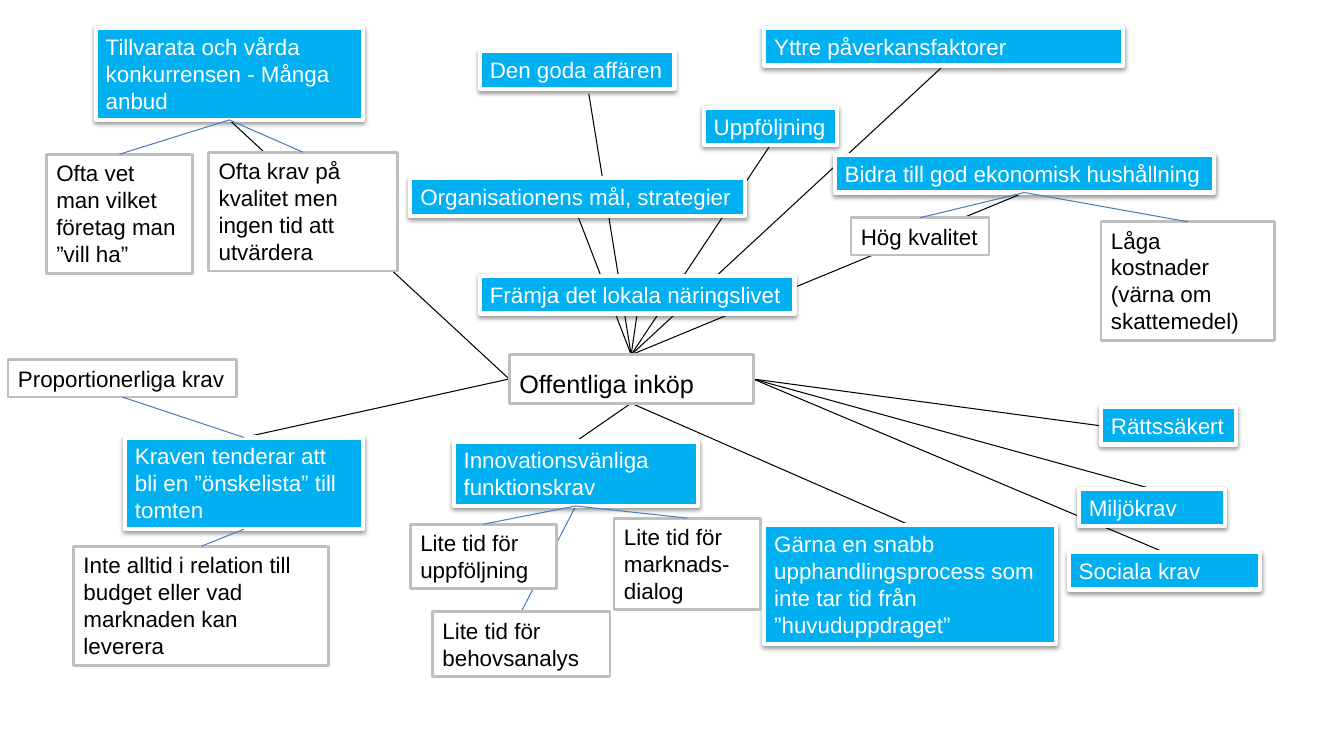
"""Build a mind map of the demands on public procurement."""
from lxml import etree
from pptx import Presentation
from pptx.dml.color import RGBColor
from pptx.enum.shapes import MSO_CONNECTOR
from pptx.enum.text import MSO_ANCHOR, MSO_AUTO_SIZE, PP_ALIGN
from pptx.oxml import parse_xml
from pptx.oxml.ns import nsdecls, qn
from pptx.util import Inches, Pt

BLACK = RGBColor(0x00, 0x00, 0x00)
WHITE = RGBColor(0xFF, 0xFF, 0xFF)
GREY = RGBColor(0xBF, 0xBF, 0xBF)
CYAN = RGBColor(0x00, 0xB0, 0xF0)
BLUE = RGBColor(0x4B, 0x7E, 0xBC)
TOP, LEFT, BOTTOM, RIGHT = range(4)

SHADOW = (
    f'<a:effectLst {nsdecls("a")}><a:outerShdw blurRad="40000" dist="20000" '
    'dir="5400000" rotWithShape="0"><a:srgbClr val="000000">'
    '<a:alpha val="38000"/></a:srgbClr></a:outerShdw></a:effectLst>'
)

# name: text, (left, top, width, height), wrap
GOALS = {
    "local": ("Främja det lokala näringslivet", (4.76, 2.74, 3.12, 0.37), False),
    "economy": ("Bidra till god ekonomisk hushållning", (8.28, 1.54, 3.76, 0.37), False),
    "legal": ("Rättssäkert", (10.92, 4.04, 1.34, 0.37), False),
    "environment": ("Miljökrav", (10.7, 4.85, 1.45, 0.37), True),
    "social": ("Sociala krav", (10.6, 5.48, 1.9, 0.37), True),
    "speed": ("Gärna en snabb upphandlingsprocess som inte tar tid från ”huvuduppdraget”",
              (7.58, 5.21, 2.89, 1.18), True),
    "innovation": ("Innovationsvänliga funktionskrav", (4.5, 4.38, 2.42, 0.64), True),
    "wishes": ("Kraven tenderar att bli en ”önskelista” till tomten",
               (1.24, 4.34, 2.36, 0.91), True),
    "competition": ("Tillvarata och vårda konkurrensen - Många anbud",
                    (0.95, 0.28, 2.65, 0.91), True),
    "strategy": ("Organisationens mål, strategier", (4.07, 1.77, 3.32, 0.37), False),
    "follow_up": ("Uppföljning", (6.98, 1.07, 1.32, 0.37), False),
    "deal": ("Den goda affären", (4.76, 0.51, 1.93, 0.37), False),
    "external": ("Yttre påverkansfaktorer", (7.58, 0.28, 3.56, 0.37), True),
}
REMARKS = {
    "quality": ("Hög kvalitet", (8.44, 2.16, 1.37, 0.37), False),
    "costs": ("Låga kostnader (värna om skattemedel)", (10.92, 2.2, 1.72, 1.18), True),
    "time_follow_up": ("Lite tid för uppföljning", (4.07, 5.2, 1.45, 0.64), True),
    "time_analysis": ("Lite tid för behovsanalys", (4.29, 6.07, 1.76, 0.64), True),
    "time_dialogue": ("Lite tid för marknads-dialog", (6.09, 5.14, 1.45, 0.91), True),
    "budget": ("Inte alltid i relation till budget eller vad marknaden kan leverera",
               (0.73, 5.42, 2.53, 1.18), True),
    "supplier": ("Ofta vet man vilket företag man ”vill ha”", (0.46, 1.53, 1.45, 1.18), True),
    "evaluation": ("Ofta krav på kvalitet men ingen tid att utvärdera",
                   (2.07, 1.51, 1.87, 1.18), True),
    "proportion": ("Proportionerliga krav", (0.08, 3.57, 2.27, 0.37), False),
}
# side of the centre, goal, side of the goal
CENTRE_LINKS = [
    (TOP, "external", BOTTOM), (TOP, "economy", BOTTOM), (TOP, "follow_up", BOTTOM),
    (TOP, "strategy", BOTTOM), (TOP, "local", BOTTOM), (LEFT, "competition", BOTTOM),
    (LEFT, "wishes", TOP), (BOTTOM, "innovation", TOP), (BOTTOM, "speed", TOP),
    (RIGHT, "legal", LEFT), (RIGHT, "environment", TOP), (RIGHT, "social", TOP),
]
# goal, side, remark, side
REMARK_LINKS = [
    ("innovation", BOTTOM, "time_follow_up", TOP),
    ("innovation", BOTTOM, "time_dialogue", TOP),
    ("competition", BOTTOM, "supplier", TOP),
    ("competition", BOTTOM, "evaluation", TOP),
    ("wishes", BOTTOM, "budget", TOP),
    ("wishes", TOP, "proportion", BOTTOM),
    ("economy", BOTTOM, "quality", TOP),
    ("economy", BOTTOM, "costs", TOP),
]


def paint(shape, fill, outline, width):
    """Give a shape its fill and outline."""
    shape.fill.solid()
    shape.fill.fore_color.rgb = fill
    shape.line.color.rgb = outline
    shape.line.width = Pt(width)


def write(shape, text, size, color):
    """Put one left-aligned paragraph in a shape and return it."""
    shape.text_frame.text = text
    paragraph = shape.text_frame.paragraphs[0]
    paragraph.alignment = PP_ALIGN.LEFT
    for run in paragraph.runs:
        run.font.name = "Arial"
        run.font.size = Pt(size)
        run.font.color.rgb = color
    return paragraph


def add_centre(slide):
    """Turn the title placeholder into the centre of the map."""
    shape = slide.shapes.title
    shape.left, shape.top = Inches(5.05), Inches(3.52)
    shape.width, shape.height = Inches(2.42), Inches(0.48)
    paint(shape, WHITE, GREY, 2)
    paragraph = write(shape, "Offentliga inköp", 18, BLACK)
    paragraph.space_after = Pt(6)
    shape.text_frame.vertical_anchor = MSO_ANCHOR.BOTTOM
    shape.text_frame.auto_size = MSO_AUTO_SIZE.NONE
    return shape


def add_box(slide, text, place, wrap, is_goal):
    """Add a goal or a remark as a text box."""
    shape = slide.shapes.add_textbox(*map(Inches, place))
    if is_goal:
        paint(shape, CYAN, WHITE, 3)
        shape._element.spPr.append(parse_xml(SHADOW))
    else:
        paint(shape, WHITE, GREY, 2)
    write(shape, text, 16, WHITE if is_goal else BLACK)
    shape.text_frame.word_wrap = wrap
    shape.text_frame.auto_size = MSO_AUTO_SIZE.SHAPE_TO_FIT_TEXT
    return shape


def add_link(slide, start, start_side, color, end=None, end_side=None,
             end_point=(0, 0), behind=False):
    """Draw a line from a shape's side to another shape or a point."""
    x, y = map(Inches, end_point)
    line = slide.shapes.add_connector(MSO_CONNECTOR.STRAIGHT, x, y, x, y)
    line.begin_connect(start, start_side)
    if end is not None:
        line.end_connect(end, end_side)
    line.line.color.rgb = color
    line.line.width = Pt(0.75)
    etree.SubElement(line._element.spPr, qn("a:effectLst"))
    if behind:
        slide.shapes._spTree.insert(2, line._element)


def main():
    """Build and save the slide."""
    presentation = Presentation()
    presentation.slide_width, presentation.slide_height = Inches(13.33), Inches(7.5)
    slide = presentation.slides.add_slide(presentation.slide_layouts[5])
    centre = add_centre(slide)
    boxes = {}
    for group, is_goal in ((GOALS, True), (REMARKS, False)):
        for name, (text, place, wrap) in group.items():
            boxes[name] = add_box(slide, text, place, wrap, is_goal)
    for side, goal, goal_side in CENTRE_LINKS:
        add_link(slide, centre, side, BLACK, boxes[goal], goal_side, behind=True)
    add_link(slide, centre, TOP, BLACK, end_point=(5.84, 0.93), behind=True)
    for goal, side, remark, remark_side in REMARK_LINKS:
        add_link(slide, boxes[goal], side, BLUE, boxes[remark], remark_side)
    add_link(slide, boxes["innovation"], BOTTOM, BLUE, boxes["time_analysis"], TOP,
             behind=True)
    presentation.save("out.pptx")


if __name__ == "__main__":
    main()
